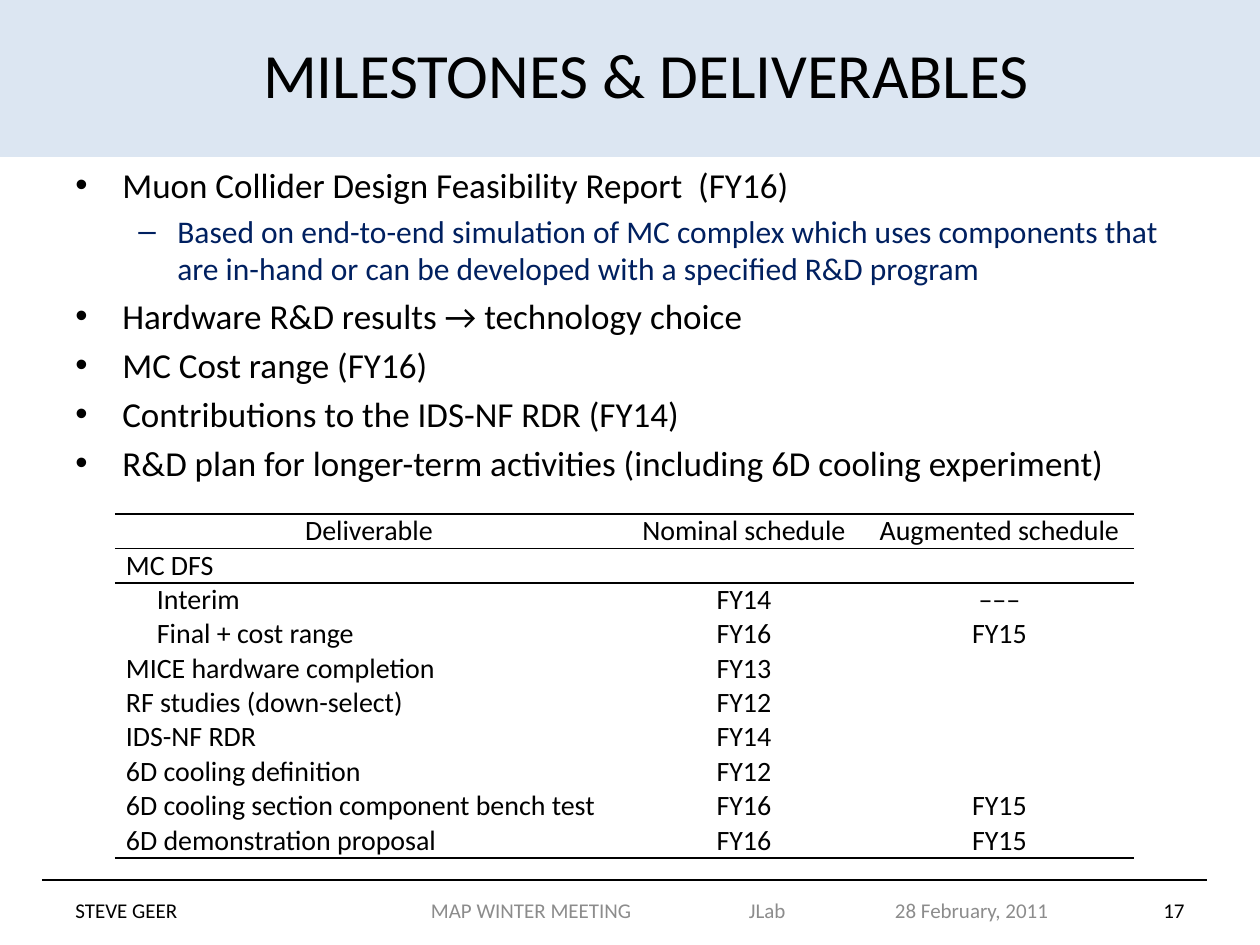
from lxml import etree
from pptx import Presentation
from pptx.dml.color import RGBColor
from pptx.enum.shapes import MSO_CONNECTOR, MSO_SHAPE
from pptx.enum.text import MSO_ANCHOR, PP_ALIGN
from pptx.oxml.ns import qn
from pptx.util import Pt

SCALE = 914400 / 126
LEFT, MID, RIGHT = PP_ALIGN.LEFT, PP_ALIGN.CENTER, PP_ALIGN.RIGHT
TOP, CENTER = MSO_ANCHOR.TOP, MSO_ANCHOR.MIDDLE
RECT, LINE = MSO_SHAPE.RECTANGLE, MSO_CONNECTOR.STRAIGHT
FONT = "Calibri"
PLAIN = "{2D5ABB26-0587-4C30-8999-92F81FD0307C}"
BLACK = RGBColor(0, 0, 0)
NAVY = RGBColor(0x00, 0x20, 0x60)
GRAY = RGBColor(0x8C, 0x8C, 0x8C)
PALE = RGBColor(0xDC, 0xE6, 0xF2)

POINTS = [
    (0, "Muon Collider Design Feasibility Report  (FY16)"),
    (1, "Based on end-to-end simulation of MC complex which uses components "
        "that are in-hand or can be developed with a specified R&D program"),
    (0, "Hardware R&D results → technology choice"),
    (0, "MC Cost range (FY16)"),
    (0, "Contributions to the IDS-NF RDR (FY14)"),
    (0, "R&D plan for longer-term activities (including 6D cooling experiment)"),
]
# Per level: mark, text indent, hanging indent, size, space before, colour
LEVELS = [("•", 47, 47, 20, 4, BLACK), ("–", 102, 39, 18, 3.6, NAVY)]

HEAD = ("Deliverable", "Nominal schedule", "Augmented schedule")
ROWS = [
    HEAD,
    ("MC DFS", "", ""),
    ("Interim", "FY14", "–––"),
    ("Final + cost range", "FY16", "FY15"),
    ("MICE hardware completion", "FY13", ""),
    ("RF studies (down-select)", "FY12", ""),
    ("IDS-NF RDR", "FY14", ""),
    ("6D cooling definition", "FY12", ""),
    ("6D cooling section component bench test", "FY16", "FY15"),
    ("6D demonstration proposal", "FY16", "FY15"),
]
INDENTED = (2, 3)
COLS = (508, 242, 269)


def px(n):
    return round(n * SCALE)


def style(para, size, color, align=LEFT):
    para.alignment = align
    for run in para.runs:
        run.font.name = FONT
        run.font.size = Pt(size)
        run.font.color.rgb = color


def add_text(slide, box, anchor=CENTER):
    frame = slide.shapes.add_textbox(*map(px, box)).text_frame
    frame.word_wrap = True
    frame.vertical_anchor = anchor
    return frame


def label(slide, box, text, size, color, align):
    frame = add_text(slide, box)
    frame.text = text
    style(frame.paragraphs[0], size, color, align)
    return frame


def header(slide, box):
    x, y, w, h = box
    band = slide.shapes.add_shape(RECT, *map(px, box))
    band.shadow.inherit = False
    band.fill.solid()
    band.fill.fore_color.rgb = PALE
    band.line.fill.background()
    label(slide, (x + 210, y, w - 388, h - 10),
          "MILESTONES & DELIVERABLES", 36, BLACK, MID)


def points(slide, box):
    frame = add_text(slide, box, TOP)
    for i, (level, text) in enumerate(POINTS):
        mark, indent, hang, size, gap, color = LEVELS[level]
        para = frame.add_paragraph() if i else frame.paragraphs[0]
        para.text = text
        para.level = level
        if i:
            para.space_before = Pt(gap)
        props = para._p.get_or_add_pPr()
        props.set("marL", str(px(indent)))
        props.set("indent", str(-px(hang)))
        etree.SubElement(props, qn("a:buFont")).set("typeface", "Arial")
        etree.SubElement(props, qn("a:buChar")).set("char", mark)
        style(para, size, color)


def border(cell, side):
    line = etree.SubElement(cell._tc.get_or_add_tcPr(), qn("a:" + side))
    line.set("w", str(Pt(1)))
    fill = etree.SubElement(line, qn("a:solidFill"))
    etree.SubElement(fill, qn("a:srgbClr")).set("val", str(BLACK))


def fill_cell(cell, text, align):
    cell.margin_left = cell.margin_right = px(11)
    cell.margin_top = cell.margin_bottom = 0
    cell.fill.background()
    cell.text = text
    para = cell.text_frame.paragraphs[0]
    style(para, 16, BLACK, align)
    if not text:
        end = etree.SubElement(para._p, qn("a:endParaRPr"))
        end.set("sz", "1600")
    return para


def schedule(slide, box):
    frame = slide.shapes.add_table(len(ROWS), len(COLS), *map(px, box))
    table = frame.table
    table.first_row = table.horz_banding = False
    table._tbl.tblPr.find(qn("a:tableStyleId")).text = PLAIN
    for col, width in zip(table.columns, COLS):
        col.width = px(width)
    last = len(ROWS) - 1
    for r, row in enumerate(ROWS):
        table.rows[r].height = px(box[3] / len(ROWS))
        for c, text in enumerate(row):
            cell = table.cell(r, c)
            if r in (0, 1):
                border(cell, "lnT")
            if r in (0, last):
                border(cell, "lnB")
            para = fill_cell(cell, text, MID if c or not r else LEFT)
            if r in INDENTED and c == 0:
                para._p.get_or_add_pPr().set("marL", str(px(31)))


def footer(slide, box):
    x, y, w, h = box
    rule = slide.shapes.add_connector(LINE, px(x), px(y), px(x + w), px(y))
    rule.line.color.rgb = BLACK
    rule.line.width = Pt(0.75)
    etree.SubElement(rule._element.spPr, qn("a:effectLst"))
    top, tall = y + 5, h - 5
    label(slide, (x + 21, top, 294, tall), "STEVE GEER", 12, BLACK, LEFT)
    event = label(slide, (x + 357, top, 683, tall),
                  "MAP WINTER MEETING\tJLab\t28 February, 2011", 12, GRAY, LEFT)
    event.margin_left = px(32)
    props = event.paragraphs[0]._p.get_or_add_pPr()
    tabs = etree.SubElement(props, qn("a:tabLst"))
    for stop in (318, 464):
        tab = etree.SubElement(tabs, qn("a:tab"))
        tab.set("pos", str(px(stop)))
        tab.set("algn", "l")
    label(slide, (x + 1071, top, 84, tall), "17", 12, BLACK, RIGHT)


def main():
    deck = Presentation()
    deck.slide_width, deck.slide_height = px(1260), px(945)
    slide = deck.slides.add_slide(deck.slide_layouts[6])
    header(slide, (0, 0, 1260, 157))
    points(slide, (63, 157, 1124, 672))
    schedule(slide, (115, 514, 1019, 344))
    footer(slide, (42, 880, 1165, 55))
    deck.save("out.pptx")


if __name__ == "__main__":
    main()
